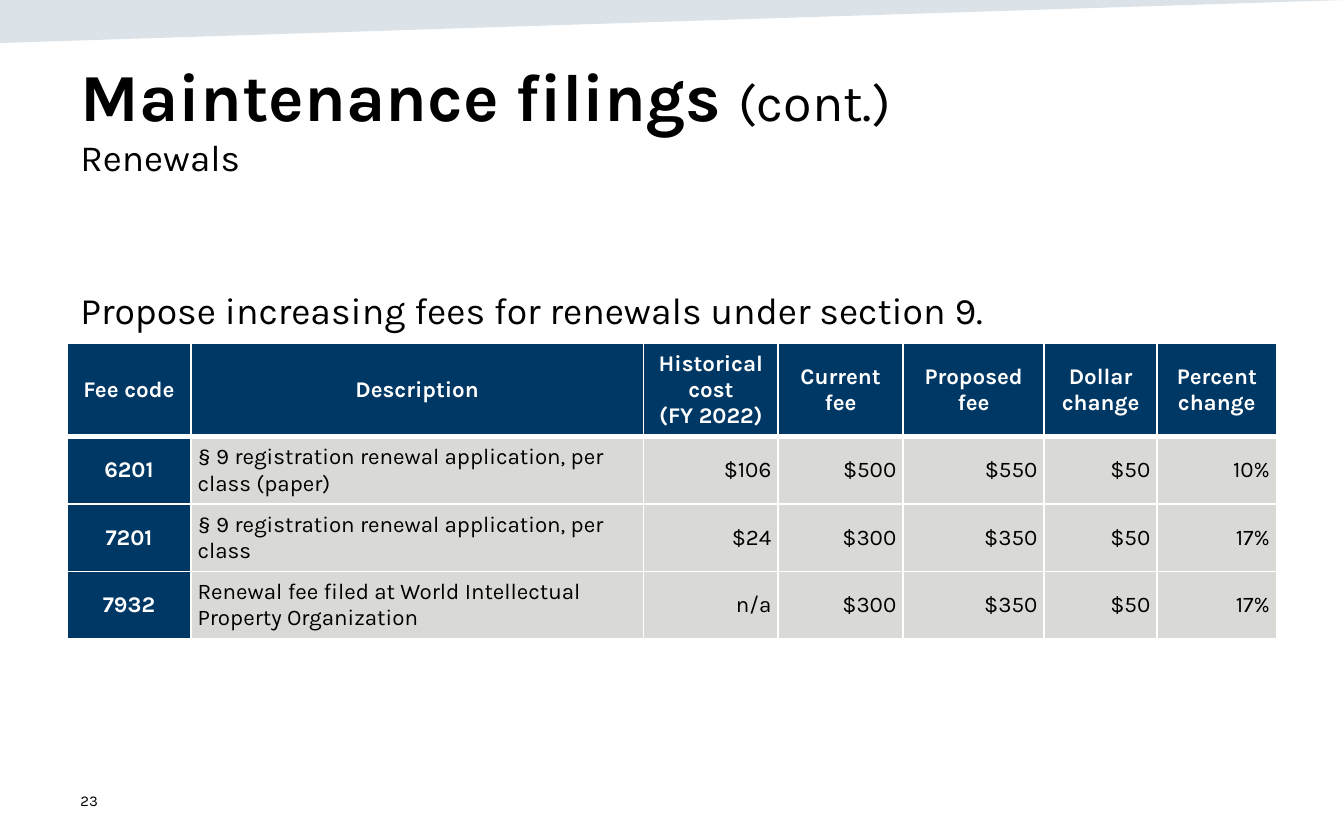
from lxml.etree import SubElement
from pptx import Presentation
from pptx.dml.color import RGBColor
from pptx.enum.text import MSO_ANCHOR, PP_ALIGN
from pptx.oxml.ns import qn
from pptx.util import Inches, Pt

# Content
FONT = "Karla"
COLORS = {"band": "164469", "navy": "003865", "gray": "D9D9D6",
          "black": "000000", "white": "FFFFFF"}
TITLE = "Maintenance filings "
TITLE_SUFFIX = "(cont.)"
SUBTITLE = "Renewals"
BODY = "Propose increasing fees for renewals under section 9."
PAGE_NUMBER = "23"
HEADERS = ["Fee code", "Description", "Historical cost\n(FY 2022)", "Current fee",
           "Proposed fee", "Dollar change", "Percent change"]
FEES = [
    ["6201", "§ 9 registration renewal application, per class (paper)",
     "$106", "$500", "$550", "$50", "10%"],
    ["7201", "§ 9 registration renewal application, per class",
     "$24", "$300", "$350", "$50", "17%"],
    ["7932", "Renewal fee filed at World Intellectual Property Organization",
     "n/a", "$300", "$350", "$50", "17%"],
]
COLUMN_WIDTHS = [0.92, 3.37, 1, 0.93, 1.05, 0.84, 0.89]
HEADER_HEIGHT, ROW_HEIGHT = 0.68, 0.49
CELL_MARGIN = 0.05


def color(name):
    return RGBColor.from_string(COLORS[name])


def add_text(paragraph, text, size=12, color_name="black", bold=False,
             align=PP_ALIGN.LEFT, before=0, after=0, line_spacing=1.0):
    paragraph.alignment = align
    paragraph.space_before, paragraph.space_after = Pt(before), Pt(after)
    paragraph.line_spacing = line_spacing
    run = paragraph.add_run()
    run.text = text
    run.font.name, run.font.size, run.font.bold = FONT, Pt(size), bold
    run.font.color.rgb = color(color_name)


def add_box(slide, left, top, width, height, anchor):
    shape = slide.shapes.add_textbox(*map(Inches, (left, top, width, height)))
    shape.text_frame.word_wrap = True
    shape.text_frame.vertical_anchor = anchor
    return shape.text_frame.paragraphs[0]


def set_borders(cell, bottom=1, top=1):
    properties = cell._tc.get_or_add_tcPr()
    widths = {"a:lnL": 1, "a:lnR": 1, "a:lnT": top, "a:lnB": bottom}
    for index, (tag, width) in enumerate(widths.items()):
        line = properties.makeelement(qn(tag), {"w": str(Pt(width))})
        fill = SubElement(line, qn("a:solidFill"))
        SubElement(fill, qn("a:srgbClr"), val=COLORS["white"])
        properties.insert(index, line)


def add_band(slide):
    builder = slide.shapes.build_freeform(0, 0)
    builder.add_line_segments([(0, Inches(0.32)), (Inches(10), 0)], close=True)
    band = builder.convert_to_shape()
    band.shadow.inherit = False
    band.line.fill.background()
    band.fill.solid()
    band.fill.fore_color.rgb = color("band")
    band_color = band._element.spPr.find(qn("a:solidFill")).find(qn("a:srgbClr"))
    SubElement(band_color, qn("a:alpha"), val="15000")


def add_fee_table(slide, left, top):
    rows = [HEADERS] + FEES
    heights = [HEADER_HEIGHT] + [ROW_HEIGHT] * len(FEES)
    table = slide.shapes.add_table(
        len(rows), len(HEADERS), Inches(left), Inches(top),
        Inches(sum(COLUMN_WIDTHS)), Inches(sum(heights))).table
    table.first_row = table.horz_banding = False
    for column, width in zip(table.columns, COLUMN_WIDTHS):
        column.width = Inches(width)
    for row_index, (values, height) in enumerate(zip(rows, heights)):
        table.rows[row_index].height = Inches(height)
        is_header = row_index == 0
        for column_index, value in enumerate(values):
            cell = table.cell(row_index, column_index)
            is_label = is_header or column_index == 0
            if is_label:
                align = PP_ALIGN.CENTER
            else:
                align = PP_ALIGN.LEFT if column_index == 1 else PP_ALIGN.RIGHT
            cell.vertical_anchor = MSO_ANCHOR.MIDDLE
            cell.margin_left = cell.margin_right = Inches(CELL_MARGIN)
            cell.margin_top = cell.margin_bottom = Inches(CELL_MARGIN)
            cell.fill.solid()
            cell.fill.fore_color.rgb = color("navy" if is_label else "gray")
            set_borders(cell, bottom=3 if is_header else 1,
                        top=3 if row_index == 1 else 1)
            spacing = 0 if is_header else 6
            for line_index, line in enumerate(value.split("\n")):
                frame = cell.text_frame
                paragraph = frame.add_paragraph() if line_index else frame.paragraphs[0]
                add_text(paragraph, line, bold=is_label, align=align,
                         color_name="white" if is_label else "black",
                         before=spacing, after=spacing)


def main():
    presentation = Presentation()
    presentation.slide_width, presentation.slide_height = Inches(10), Inches(6.25)
    slide = presentation.slides.add_slide(presentation.slide_layouts[6])

    # Top band and page number
    add_band(slide)
    add_text(add_box(slide, 0.5, 5.79, 2.25, 0.33, MSO_ANCHOR.MIDDLE), PAGE_NUMBER, size=8)

    # Title and subtitle
    title = add_box(slide, 0.5, 0.34, 9, 1.04, MSO_ANCHOR.BOTTOM)
    add_text(title, TITLE, size=36, bold=True)
    add_text(title, TITLE_SUFFIX, size=27.9)
    title.add_line_break()
    add_text(title, SUBTITLE, size=19.8)

    # Body text and fee table
    body = add_box(slide, 0.5, 2.02, 9, 3.82, MSO_ANCHOR.TOP)
    add_text(body, BODY, size=20, before=9, line_spacing=1.2)
    add_fee_table(slide, 0.5, 2.55)

    presentation.save("out.pptx")


if __name__ == "__main__":
    main()
